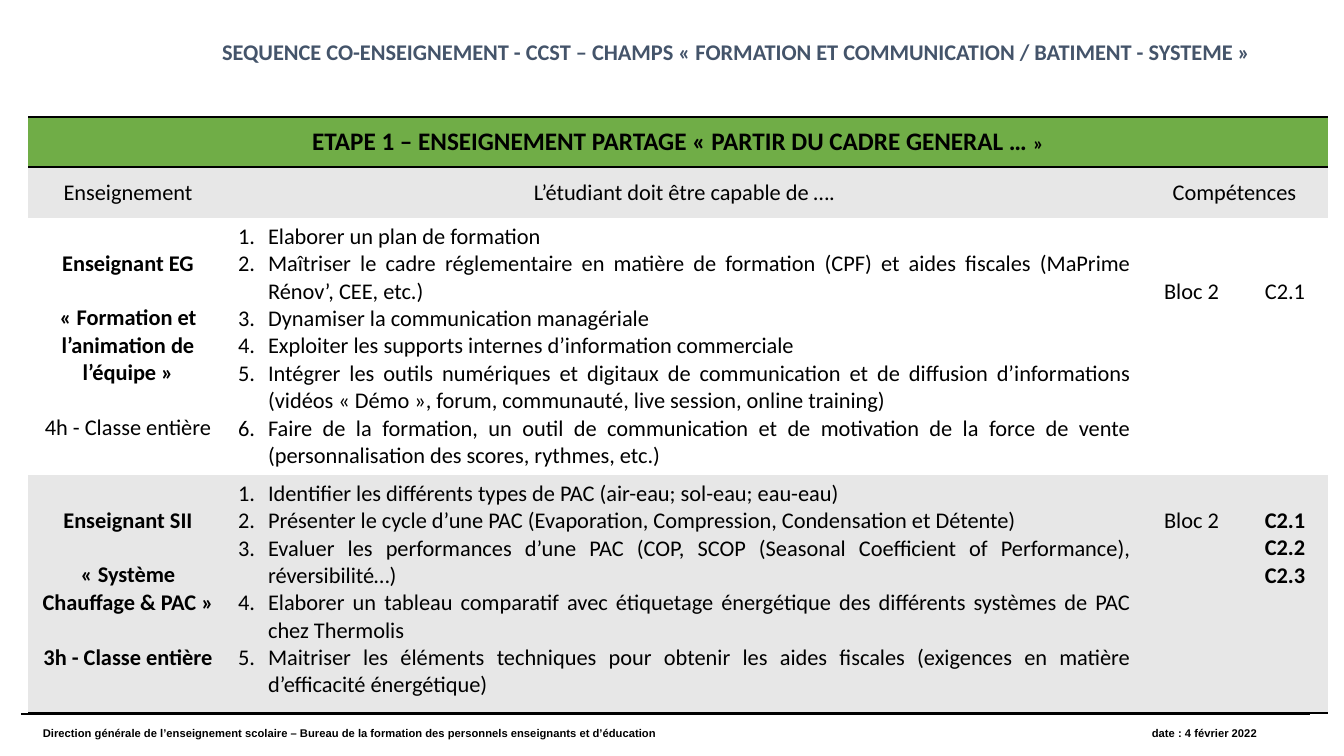
"""Build the co-teaching sequence slide with its step 1 table."""
import pptx
import pptx.util
import pptx.dml.color
import pptx.enum.shapes
import pptx.enum.text
import pptx.oxml.ns
from lxml import etree

BLACK = pptx.dml.color.RGBColor(0x00, 0x00, 0x00)
WHITE = pptx.dml.color.RGBColor(0xFF, 0xFF, 0xFF)
GREY = pptx.dml.color.RGBColor(0xE7, 0xE7, 0xE7)
GREEN = pptx.dml.color.RGBColor(0x70, 0xAD, 0x47)
SLATE = pptx.dml.color.RGBColor(0x44, 0x54, 0x6A)
NO_STYLE = "{2D5ABB26-0587-4C30-8999-92F81FD0307C}"
CENTER = pptx.enum.text.PP_ALIGN.CENTER
JUSTIFY = pptx.enum.text.PP_ALIGN.JUSTIFY
MIDDLE = pptx.enum.text.MSO_ANCHOR.MIDDLE
TOP = pptx.enum.text.MSO_ANCHOR.TOP
qn = pptx.oxml.ns.qn


def px(count):
    return round(count * 914400 / 100.8)


def add_span(para, text, size, bold, color=BLACK, font="Calibri"):
    span = para.add_run()
    span.text = text
    span.font.size = pptx.util.Pt(size)
    span.font.bold = bold
    span.font.name = font
    span.font.color.rgb = color


deck = pptx.Presentation()
deck.slide_width, deck.slide_height = px(1344), px(756)
page = deck.slides.add_slide(deck.slide_layouts[5])

title = page.shapes.title
title.left, title.top, title.width, title.height = px(171), px(33), px(1131), px(37)
title.text_frame.vertical_anchor = TOP
title.text_frame.word_wrap = True
title.text_frame.auto_size = pptx.enum.text.MSO_AUTO_SIZE.NONE
para = title.text_frame.paragraphs[0]
para.alignment = CENTER
add_span(para, "SEQUENCE CO-ENSEIGNEMENT - CCST – CHAMPS « FORMATION ET COMMUNICATION / "
         "BATIMENT - SYSTEME »", 16, True, SLATE)

rule = page.shapes.add_connector(
    pptx.enum.shapes.MSO_CONNECTOR.STRAIGHT, px(21), px(714), px(1310), px(714))
rule.line.color.rgb = BLACK
rule.line.width = pptx.util.Pt(0.8)
etree.SubElement(rule._element.spPr, qn("a:effectLst"))

footer = page.shapes.add_textbox(px(33), px(721), px(1277), px(34))
footer.text_frame.word_wrap = True
para = footer.text_frame.paragraphs[0]
tabs = etree.SubElement(para._p.get_or_add_pPr(), qn("a:tabLst"))
etree.SubElement(tabs, qn("a:tab"), pos=str(px(1109)), algn="l")
add_span(para, "Direction générale de l’enseignement scolaire – Bureau de la formation des "
         "personnels enseignants et d’éducation\tdate : 4 février 2022", 8, True, font="Arial")

column_widths = [200, 913, 101, 86]
row_heights = [50, 51, 257, 238]
row_fills = [GREEN, GREY, WHITE, GREY]
frame = page.shapes.add_table(4, 4, px(28), px(117), px(sum(column_widths)), px(sum(row_heights)))
table = frame.table
table.first_row = table.horz_banding = False
table._tbl.tblPr.find(qn("a:tableStyleId")).text = NO_STYLE
for column, width in zip(table.columns, column_widths):
    column.width = px(width)
for row, height, fill in zip(table.rows, row_heights, row_fills):
    row.height = px(height)
    for cell in row.cells:
        cell.fill.solid()
        cell.fill.fore_color.rgb = fill

for row_index, sides in [(0, ["lnB", "lnT"]), (3, ["lnB"])]:
    for cell in table.rows[row_index].cells:
        for side in sides:
            border = etree.Element(qn("a:" + side), w=str(pptx.util.Pt(2)))
            paint = etree.SubElement(border, qn("a:solidFill"))
            etree.SubElement(paint, qn("a:srgbClr"), val=str(BLACK))
            cell._tc.get_or_add_tcPr().insert(0, border)

table.cell(0, 0).merge(table.cell(0, 3))
table.cell(1, 2).merge(table.cell(1, 3))

step = table.cell(0, 0)
step.vertical_anchor = MIDDLE
para = step.text_frame.paragraphs[0]
para.alignment = CENTER
add_span(para, "ETAPE 1 – ENSEIGNEMENT PARTAGE « PARTIR DU CADRE GENERAL … ", 18, True)
add_span(para, "»", 14, True)

for column_index, heading in enumerate(
        ["Enseignement", "L’étudiant doit être capable de ….", "Compétences"]):
    cell = table.cell(1, column_index)
    cell.vertical_anchor = MIDDLE
    para = cell.text_frame.paragraphs[0]
    para.alignment = CENTER
    add_span(para, heading, 16, False)

skills = [
    (2, ["Elaborer un plan de formation",
         "Maîtriser le cadre réglementaire en matière de formation (CPF) et aides fiscales "
         "(MaPrime Rénov’, CEE, etc.)",
         "Dynamiser la communication managériale",
         "Exploiter les supports internes d’information commerciale",
         "Intégrer les outils numériques et digitaux de communication et de diffusion "
         "d’informations (vidéos « Démo », forum, communauté, live session, online training)",
         "Faire de la formation, un outil de communication et de motivation de la force de "
         "vente (personnalisation des scores, rythmes, etc.)"]),
    (3, ["Identifier les différents types de PAC (air-eau; sol-eau; eau-eau)",
         "Présenter le cycle d’une PAC (Evaporation, Compression, Condensation et Détente)",
         "Evaluer les performances d’une PAC (COP, SCOP (Seasonal Coefficient of "
         "Performance), réversibilité…)",
         "Elaborer un tableau comparatif avec étiquetage énergétique des différents systèmes "
         "de PAC chez Thermolis",
         "Maitriser les éléments techniques pour obtenir les aides fiscales (exigences en "
         "matière d’efficacité énergétique)"]),
]
for row_index, items in skills:
    text = table.cell(row_index, 1).text_frame
    for number, item in enumerate(items):
        para = text.add_paragraph() if number else text.paragraphs[0]
        properties = para._p.get_or_add_pPr()
        properties.set("marL", str(px(30)))
        properties.set("indent", str(-px(30)))
        etree.SubElement(properties, qn("a:buAutoNum"), type="arabicPeriod")
        para.alignment = JUSTIFY
        add_span(para, item, 16, False)

centred_cells = [
    (2, 0, 32, 19.5, [("Enseignant EG", True), ("« Formation et l’animation de l’équipe »", True),
                      ("4h - Classe entière", False)]),
    (2, 2, 60, 0, [("Bloc 2", False)]),
    (2, 3, 60, 0, [("C2.1", False)]),
    (3, 0, 32, 19.5, [("Enseignant SII", True), ("« Système Chauffage & PAC »", True),
                      ("3h - Classe entière", True)]),
    (3, 2, 32, 0, [("Bloc 2", False)]),
    (3, 3, 32, 0, [("C2.1", True), ("C2.2", True), ("C2.3", True)]),
]
for row_index, column_index, top, gap, lines in centred_cells:
    cell = table.cell(row_index, column_index)
    cell.margin_top = px(top)
    for number, (line, bold) in enumerate(lines):
        para = cell.text_frame.add_paragraph() if number else cell.text_frame.paragraphs[0]
        para.alignment = CENTER
        if number and gap:
            para.space_before = pptx.util.Pt(gap)
        add_span(para, line, 16, bold)

deck.save("out.pptx")
